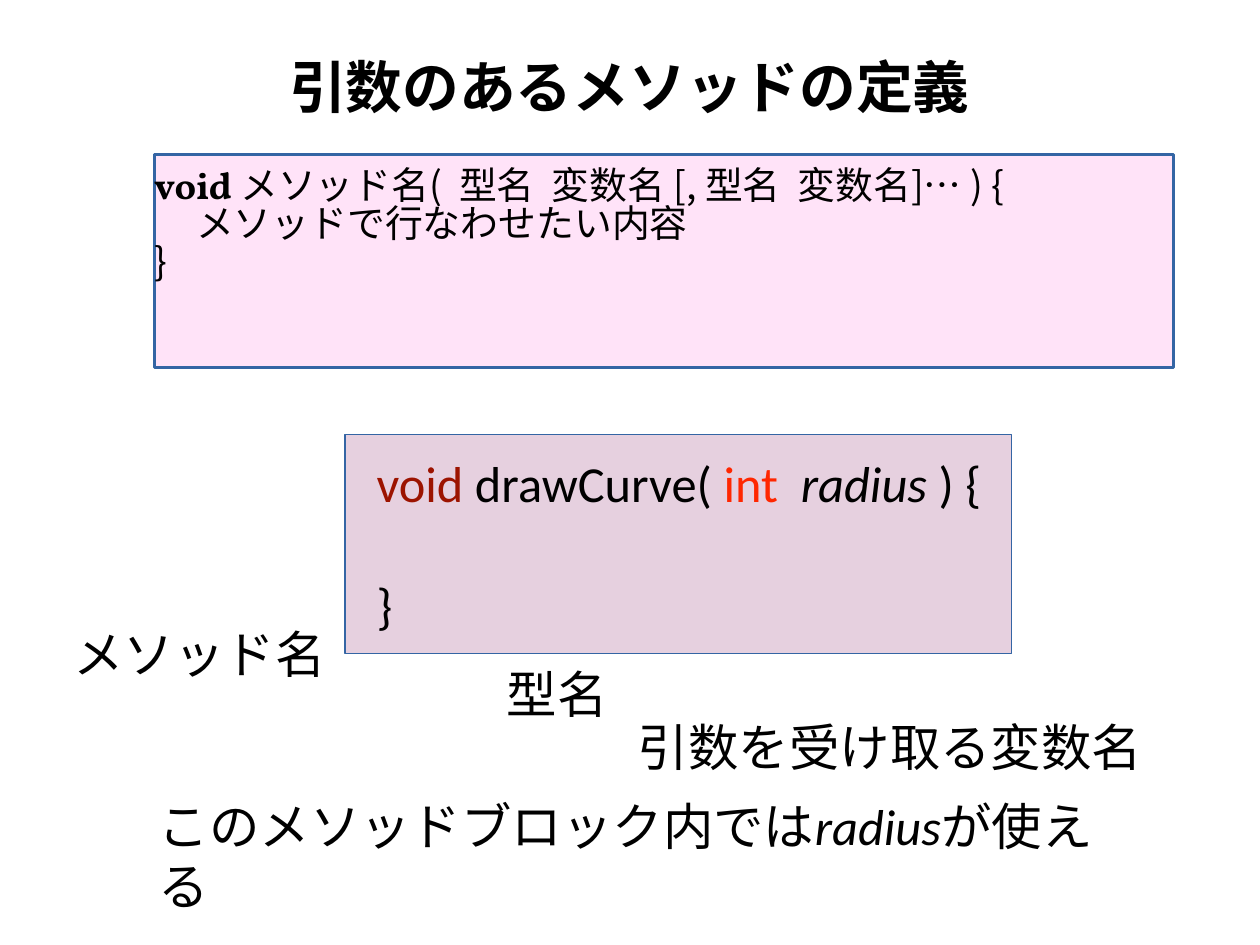
from dataclasses import dataclass

import pptx
import pptx.dml.color
import pptx.enum.shapes
import pptx.enum.text
import pptx.oxml
import pptx.oxml.ns
import pptx.slide
import pptx.text.text
import pptx.util

Inches = pptx.util.Inches
Align = pptx.enum.text.PP_ALIGN
Anchor = pptx.enum.text.MSO_ANCHOR


@dataclass(frozen=True)
class Theme:
    black: str = "000000"
    dark_red: str = "9C1300"
    red: str = "FF2600"
    pink: str = "FFE3F8"
    mauve: str = "E6D0DF"
    outline: str = "3465A4"
    gothic: str = "Noto Sans CJK JP"
    serif: str = "Vollkorn"
    sans: str = "Calibri"
    title_size: float = 36
    syntax_size: float = 24
    label_size: float = 32


THEME = Theme()


@dataclass(frozen=True)
class Span:
    text: str
    font: str = THEME.sans
    size: float = THEME.label_size
    color: str = THEME.black
    bold: bool = False
    italic: bool = False


@dataclass(frozen=True)
class Para:
    spans: tuple[Span, ...]
    align: Align = Align.LEFT
    indent: float = 0
    line_spacing: float = 1.0
    space_before: float = 0


@dataclass(frozen=True)
class Box:
    left: float
    top: float
    width: float
    height: float
    paras: tuple[Para, ...]
    anchor: Anchor = Anchor.MIDDLE
    inset: float = 0.04
    wrap: bool = True


@dataclass(frozen=True)
class Panel:
    left: float
    top: float
    width: float
    height: float
    fill: str
    line_width: float


def syntax_para(spans: tuple[Span, ...], indent: float = 0.28) -> Para:
    return Para(spans, Align.JUSTIFY, indent, line_spacing=0.84)


def syntax_span(text: str) -> Span:
    return Span(text, THEME.gothic, THEME.syntax_size)


def label(left: float, top: float, width: float, text: str) -> Box:
    return Box(left, top, width, 0.58, (Para((Span(text),), Align.CENTER),), wrap=False)


PANELS = (
    Panel(1.36, 1.36, 8.99, 1.88, THEME.pink, 2),
    Panel(3.04, 3.83, 5.88, 1.93, THEME.mauve, 1),
)

TITLE = Span("引数のあるメソッドの定義", THEME.gothic, THEME.title_size, bold=True)

BOXES = (
    Box(1.08, 0.22, 8.94, 1.07, (Para((TITLE,), Align.CENTER),), inset=0),
    Box(1.08, 1.49, 8.94, 1.71, (
        syntax_para((
            Span("void", THEME.serif, THEME.syntax_size, bold=True),
            syntax_span(" メソッド名(  型名  変数名 [, 型名  変数名]… ) {"),
        )),
        syntax_para((syntax_span("メソッドで行なわせたい内容"),), indent=0.65),
        syntax_para((syntax_span("}"),)),
    ), Anchor.TOP, inset=0),
    Box(3.28, 3.99, 5.89, 1.6, (
        Para((
            Span("void", color=THEME.dark_red),
            Span(" drawCurve( "),
            Span("int  ", color=THEME.red),
            Span("radius", italic=True),
            Span(" ) {"),
        )),
        Para((Span("}"),), space_before=39),
    )),
    label(4.42, 5.82, 0.99, "型名"),
    label(5.58, 6.29, 4.54, "引数を受け取る変数名"),
    label(0.6, 5.47, 2.32, "メソッド名"),
    Box(1.36, 7.24, 8.62, 0.6, (
        Para((
            Span("このメソッドブロック内では"),
            Span("radius", italic=True),
            Span("が使える"),
        )),
    )),
)


def rgb(color: str) -> pptx.dml.color.RGBColor:
    return pptx.dml.color.RGBColor.from_string(color)


def draw_panel(slide: pptx.slide.Slide, panel: Panel) -> None:
    shape = slide.shapes.add_shape(
        pptx.enum.shapes.MSO_SHAPE.RECTANGLE,
        Inches(panel.left), Inches(panel.top), Inches(panel.width), Inches(panel.height),
    )
    shape.shadow.inherit = False
    shape.fill.solid()
    shape.fill.fore_color.rgb = rgb(panel.fill)
    shape.line.color.rgb = rgb(THEME.outline)
    shape.line.width = pptx.util.Pt(panel.line_width)


def add_span(paragraph: pptx.text.text._Paragraph, span: Span) -> None:
    """Add a run whose Latin and East Asian typefaces are the same."""
    run = paragraph.add_run()
    run.text = span.text
    font = run.font
    font.name, font.size = span.font, pptx.util.Pt(span.size)
    font.bold, font.italic = span.bold, span.italic
    font.color.rgb = rgb(span.color)
    east_asian = pptx.oxml.parse_xml(
        f'<a:ea {pptx.oxml.ns.nsdecls("a")} typeface="{span.font}"/>'
    )
    run._r.get_or_add_rPr().find(pptx.oxml.ns.qn("a:latin")).addnext(east_asian)


def draw_box(slide: pptx.slide.Slide, box: Box) -> None:
    shape = slide.shapes.add_textbox(
        Inches(box.left), Inches(box.top), Inches(box.width), Inches(box.height)
    )
    frame = shape.text_frame
    frame.word_wrap = box.wrap
    frame.vertical_anchor = box.anchor
    frame.margin_left = frame.margin_right = Inches(box.inset)
    frame.margin_top = frame.margin_bottom = Inches(box.inset)
    for index, para in enumerate(box.paras):
        paragraph = frame.add_paragraph() if index else frame.paragraphs[0]
        paragraph.alignment = para.align
        paragraph.line_spacing = para.line_spacing
        if para.space_before:
            paragraph.space_before = pptx.util.Pt(para.space_before)
        if para.indent:
            paragraph._p.get_or_add_pPr().set("marL", str(Inches(para.indent)))
        for span in para.spans:
            add_span(paragraph, span)


def main() -> None:
    deck = pptx.Presentation()
    deck.slide_width, deck.slide_height = Inches(11.11), Inches(8.33)
    slide = deck.slides.add_slide(deck.slide_layouts[6])
    for panel in PANELS:
        draw_panel(slide, panel)
    for box in BOXES:
        draw_box(slide, box)
    deck.save("out.pptx")


if __name__ == "__main__":
    main()
